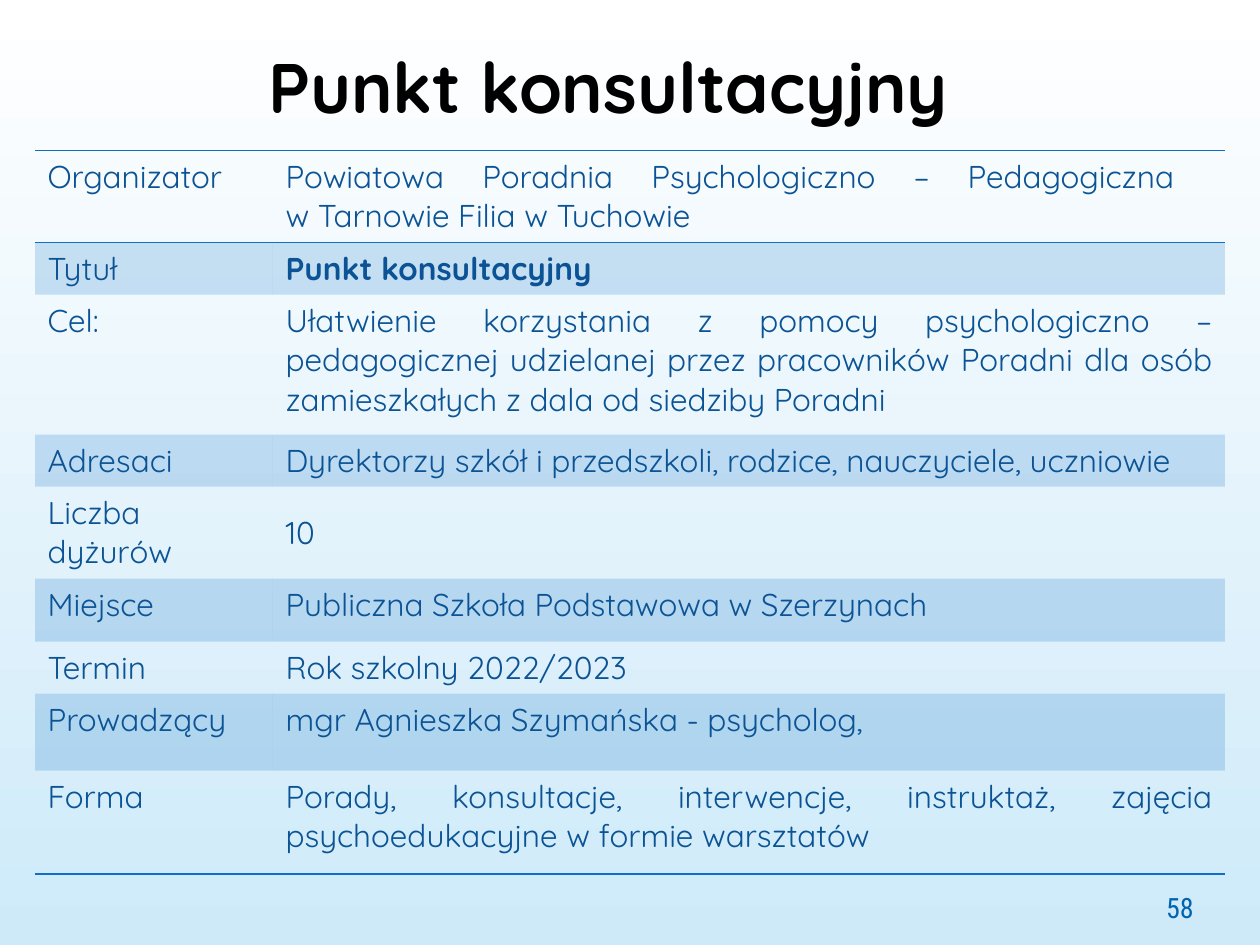
from dataclasses import dataclass

from lxml import etree
from pptx import Presentation
from pptx.dml import color
from pptx.enum import text
from pptx.oxml import ns
from pptx.util import Pt

BLUE, INK = "0F6FC6", "0B5394"
FONT = "Quicksand"
NO_STYLE = "{2D5ABB26-0587-4C30-8999-92F81FD0307C}"


@dataclass
class Row:
    label: str
    value: str
    height: float
    bold: bool = False
    anchor: text.MSO_ANCHOR = text.MSO_ANCHOR.TOP
    edges: tuple = ()


ROWS = [
    Row("Organizator",
        "Powiatowa Poradnia Psychologiczno – Pedagogiczna \vw Tarnowie Filia w Tuchowie",
        52.5, edges=("a:lnT", "a:lnB")),
    Row("Tytuł", "Punkt konsultacyjny", 29.5, bold=True),
    Row("Cel:",
        "Ułatwienie korzystania z pomocy psychologiczno – pedagogicznej udzielanej "
        "przez pracowników Poradni dla osób zamieszkałych z dala od siedziby Poradni", 80),
    Row("Adresaci", "Dyrektorzy szkół i przedszkoli, rodzice, nauczyciele, uczniowie", 29.5),
    Row("Liczba dyżurów", "10", 52.5, anchor=text.MSO_ANCHOR.MIDDLE),
    Row("Miejsce", "Publiczna Szkoła Podstawowa w Szerzynach", 36),
    Row("Termin", "Rok szkolny 2022/2023", 29.5),
    Row("Prowadzący", "mgr Agnieszka Szymańska - psycholog,", 44),
    Row("Forma",
        "Porady, konsultacje, interwencje, instruktaż, zajęcia "
        "psychoedukacyjne w formie warsztatów", 59, edges=("a:lnB",)),
]


def rgb(value: str) -> color.RGBColor:
    return color.RGBColor.from_string(value)


def write(tf, content: str, size: float, name: str, ink: str, align, bold: bool = False) -> None:
    tf.text = content
    for p in tf.paragraphs:
        p.alignment = align
        for r in p.runs:
            r.font.size, r.font.name, r.font.bold = Pt(size), name, bold
            r.font.color.rgb = rgb(ink)


def add_edge(tc_pr, tag: str) -> None:
    ln = etree.Element(ns.qn(tag), w=str(Pt(1)))
    fill = etree.SubElement(ln, ns.qn("a:solidFill"))
    etree.SubElement(fill, ns.qn("a:srgbClr"), val=BLUE)
    tc_pr.append(ln)


def fill_cell(cell, content: str, row: Row, banded: bool, bold: bool, anchor) -> None:
    write(cell.text_frame, content, 18, FONT, INK, text.PP_ALIGN.JUSTIFY, bold)
    cell.vertical_anchor = anchor
    tc_pr = cell._tc.get_or_add_tcPr()
    for tag in row.edges:
        add_edge(tc_pr, tag)
    if banded:
        cell.fill.solid()
        cell.fill.fore_color.rgb = rgb(BLUE)
        clr = tc_pr.find(".//" + ns.qn("a:srgbClr"))
        etree.SubElement(clr, ns.qn("a:alpha"), val="20000")
    else:
        cell.fill.background()


def add_details(s, rows: list[Row]) -> None:
    height = sum(row.height for row in rows)
    table = s.shapes.add_table(len(rows), 2, Pt(20), Pt(86), Pt(680), Pt(height)).table
    table.first_row = table.horz_banding = False
    table._tbl.tblPr.find(ns.qn("a:tableStyleId")).text = NO_STYLE
    for column, width in zip(table.columns, (136, 544)):
        column.width = Pt(width)
    for i, row in enumerate(rows):
        table.rows[i].height = Pt(row.height)
        banded = i % 2 == 1
        fill_cell(table.cell(i, 0), row.label, row, banded, False, text.MSO_ANCHOR.TOP)
        fill_cell(table.cell(i, 1), row.value, row, banded, row.bold, row.anchor)


def set_background(s) -> None:
    fill = s.background.fill
    fill.gradient()
    fill.gradient_angle = 270
    for stop, value, position in zip(fill.gradient_stops, ("FFFFFF", "CEEAF9"), (0, 1)):
        stop.color.rgb = rgb(value)
        stop.position = position


def add_title(s) -> None:
    sp = s.shapes.title
    sp.left, sp.top, sp.width, sp.height = Pt(32.4), Pt(21), Pt(641.5), Pt(51)
    tf = sp.text_frame
    tf.vertical_anchor = text.MSO_ANCHOR.TOP
    tf.auto_size = text.MSO_AUTO_SIZE.NONE
    write(tf, "Punkt konsultacyjny ", 40, FONT, "000000", text.PP_ALIGN.CENTER, True)


def add_page_number(s) -> None:
    tf = s.shapes.add_textbox(Pt(628.5), Pt(504), Pt(91.5), Pt(29)).text_frame
    tf.word_wrap = True
    tf.vertical_anchor = text.MSO_ANCHOR.MIDDLE
    write(tf, "58", 16, "Roboto Condensed", "0065B0", text.PP_ALIGN.CENTER)


def main() -> None:
    prs = Presentation()
    prs.slide_width, prs.slide_height = Pt(720), Pt(540)
    s = prs.slides.add_slide(prs.slide_layouts[5])
    set_background(s)
    add_title(s)
    add_details(s, ROWS)
    add_page_number(s)
    prs.save("out.pptx")


if __name__ == "__main__":
    main()
